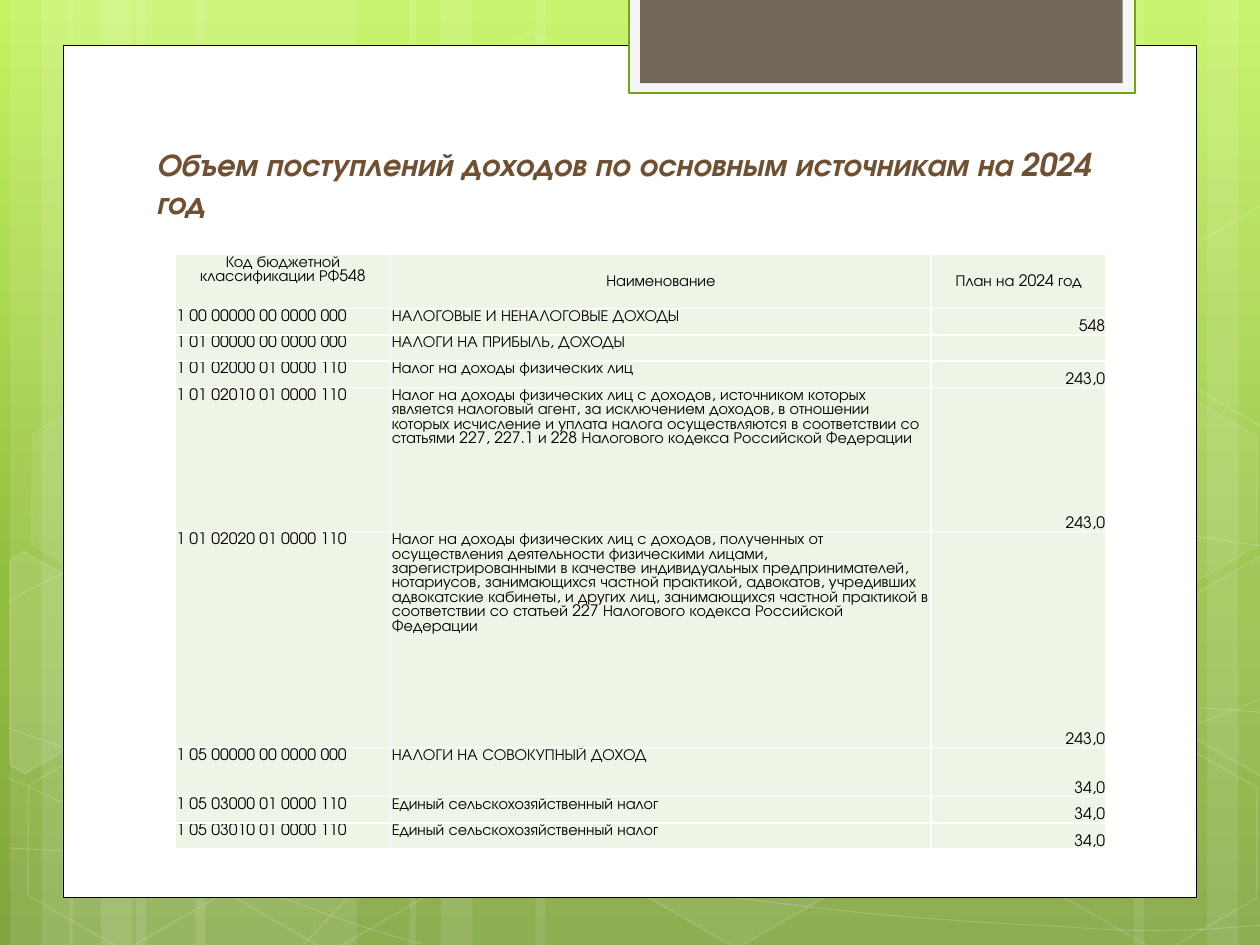
import copy
import dataclasses
import typing

import lxml.etree
import pptx
import pptx.dml.color
import pptx.enum.shapes
import pptx.enum.text
import pptx.oxml.ns
import pptx.util

Inches = pptx.util.Inches
Pt = pptx.util.Pt
qn = pptx.oxml.ns.qn
Kind = pptx.enum.shapes.MSO_SHAPE
Align = pptx.enum.text.PP_ALIGN
Anchor = pptx.enum.text.MSO_ANCHOR
Point = tuple[float, float]

FONT = "TeX Gyre Adventor"
COLORS = {
    "white": "FFFFFF", "black": "000000", "top": "C3F35F", "mid": "93BF3F",
    "low": "81A53E", "pale": "F5F5F5", "green": "74A510", "tab": "71685A",
    "title": "705032", "cell": "EEF5E7",
}


@dataclasses.dataclass
class Style:
    """Fill and line of a shape, with opacity in percent."""
    fill: str | None = None
    solid: int = 100
    line: str | None = None
    width: float = 1
    clear: int = 100


@dataclasses.dataclass
class Hexa:
    """Place and opacity of a tilted hexagon."""
    left: float
    top: float
    fill: int
    line: int


@dataclasses.dataclass
class Patch:
    """Cut hexagon at the slide's edge."""
    points: list[Point]
    fill: int


@dataclasses.dataclass
class Row:
    """Height and texts of a table row."""
    height: float
    code: str
    name: str
    plan: str


BARS = [(1.08, 1.75), (0.08, 0.5), (0.33, 0.83), (1.55, 1.75), (0.55, 0.5), (0.8, 0.83),
        (7.33, 1.75), (9.58, 0.5), (9, 0.83), (4.25, 3.08), (3.25, 0.5), (3.5, 0.83)]

WAVES = [
    [(0.07, 6.73), (0.61, 6.76), (1.15, 6.79), (1.9, 6.78), (2.65, 6.77), (3.58, 6.75),
     (4.58, 6.65), (5.58, 6.55), (7, 6.36), (7.92, 6.17), (8.83, 5.98), (9.77, 5.68), (10.07, 5.51)],
    [(0.07, 4.77), (0.36, 4.61), (0.65, 4.46), (1.21, 4.31), (1.78, 4.16), (2.59, 3.94),
     (3.47, 3.87), (4.36, 3.8), (5.44, 3.79), (6.54, 3.87), (7.64, 3.95), (9.47, 4.26), (10.07, 4.34)],
    [(0.06, 6.17), (1.27, 6.72), (2.47, 7.27), (3.34, 7.49)],
    [(0.07, 5.78), (0.38, 5.89), (0.7, 6), (1.28, 6.16), (1.86, 6.31), (2.73, 6.56),
     (3.57, 6.73), (4.4, 6.9), (5.45, 7.08), (6.28, 7.18), (7.11, 7.29), (8, 7.33),
     (8.53, 7.36), (9.05, 7.4), (9.19, 7.38), (9.45, 7.38), (9.71, 7.37), (9.89, 7.35), (10.07, 7.34)],
    [(2.42, 7.49), (2.6, 7.29), (2.78, 7.09), (3.02, 6.91), (3.26, 6.73), (3.6, 6.53),
     (3.88, 6.39), (4.16, 6.25), (4.33, 6.19), (4.7, 6.09), (5.06, 5.99), (5.73, 5.85),
     (6.08, 5.78), (6.44, 5.71), (6.49, 5.71), (6.8, 5.69), (7.11, 5.66), (7.6, 5.63),
     (7.94, 5.62), (8.29, 5.61), (8.86, 5.62), (8.86, 5.62), (9.08, 5.62), (9.3, 5.62),
     (9.53, 5.62), (9.71, 5.63), (9.88, 5.64), (9.97, 5.65), (10.06, 5.66), (10.03, 5.65), (10.06, 5.66)],
]

HEXAS = [Hexa(3.34, 0.36, 4, 8), Hexa(4.97, 5.89, 6, 12), Hexa(0.11, 5.91, 0, 12),
         Hexa(0.14, 3.12, 7, 8), Hexa(1.74, 5.92, 0, 12), Hexa(7.53, 4.53, 10, 12),
         Hexa(8.34, 5.93, 0, 12), Hexa(8.34, 3.14, 7, 8)]

PATCHES = [
    Patch([(0.08, 4.45), (0.19, 4.38), (0.96, 4.82), (0.95, 5.7), (0.2, 6.14), (0.08, 6.07)], 10),
    Patch([(9.26, 4.85), (10.01, 4.41), (10.09, 4.46), (10.09, 6.13), (10.02, 6.17), (9.26, 5.73)], 4),
    Patch([(9.26, 2.07), (10.01, 1.63), (10.1, 1.68), (10.09, 3.35), (10.02, 3.39), (9.26, 2.95)], 0),
]

ROWS = [
    Row(0.43, "Код бюджетной классификации РФ548", "Наименование", "План на 2024 год"),
    Row(0.21, "1 00 00000 00 0000 000", "НАЛОГОВЫЕ И НЕНАЛОГОВЫЕ ДОХОДЫ", "548"),
    Row(0.21, "1 01 00000 00 0000 000", "НАЛОГИ НА ПРИБЫЛЬ, ДОХОДЫ", ""),
    Row(0.21, "1 01 02000 01 0000 110", "Налог на доходы физических лиц", "243,0"),
    Row(1.15, "1 01 02010 01 0000 110",
        "Налог на доходы физических лиц с доходов, источником которых является налоговый агент, "
        "за исключением доходов, в отношении которых исчисление и уплата налога осуществляются "
        "в соответствии со статьями 227, 227.1 и 228 Налогового кодекса Российской Федерации", "243,0"),
    Row(1.72, "1 01 02020 01 0000 110",
        "Налог на доходы физических лиц с доходов, полученных от осуществления деятельности "
        "физическими лицами, зарегистрированными в качестве индивидуальных предпринимателей, "
        "нотариусов, занимающихся частной практикой, адвокатов, учредивших адвокатские кабинеты, "
        "и других лиц, занимающихся частной практикой в соответствии со статьей 227 "
        "Налогового кодекса Российской Федерации", "243,0"),
    Row(0.39, "1 05 00000 00 0000 000", "НАЛОГИ НА СОВОКУПНЫЙ ДОХОД", "34,0"),
    Row(0.21, "1 05 03000 01 0000 110", "Единый сельскохозяйственный налог", "34,0"),
    Row(0.21, "1 05 03010 01 0000 110", "Единый сельскохозяйственный налог", "34,0"),
]


def rgb(name: str) -> pptx.dml.color.RGBColor:
    """Look up a colour."""
    return pptx.dml.color.RGBColor.from_string(COLORS[name])


def paint(shape: typing.Any, style: Style) -> None:
    """Set fill, line and opacity."""
    shape.shadow.inherit = False
    props = shape._element.spPr
    for part, name, pct, where in (
        (shape.fill, style.fill, style.solid, qn("a:solidFill")),
        (shape.line.fill, style.line, style.clear, f"{qn('a:ln')}/{qn('a:solidFill')}"),
    ):
        if name is None:
            part.background()
            continue
        part.solid()
        part.fore_color.rgb = rgb(name)
        if pct < 100:
            tint = props.find(where)[0]
            lxml.etree.SubElement(tint, qn("a:alpha"), val=str(pct * 1000))
    if style.line:
        shape.line.width = Pt(style.width)


def block(slide: typing.Any, kind: typing.Any, box: tuple, style: Style) -> typing.Any:
    """Draw a preset shape."""
    shape = slide.shapes.add_shape(kind, *map(Inches, box))
    paint(shape, style)
    return shape


def trace(slide: typing.Any, points: list[Point], close: bool, style: Style) -> typing.Any:
    """Draw an outline through points."""
    spots = [(Inches(x), Inches(y)) for x, y in points]
    pen = slide.shapes.build_freeform(*spots[0])
    pen.add_line_segments(spots[1:], close=close)
    shape = pen.convert_to_shape()
    paint(shape, style)
    return shape


def bend(shape: typing.Any) -> None:
    """Turn each three line segments into a cubic curve."""
    lines = list(shape._element.iter(qn("a:lnTo")))
    trail = lines[0].getparent()
    for i in range(0, len(lines), 3):
        curve = lxml.etree.SubElement(trail, qn("a:cubicBezTo"))
        for line in lines[i:i + 3]:
            curve.append(line[0])
            trail.remove(line)


def shade(slide: typing.Any) -> None:
    """Fill the background with a gradient."""
    fill = slide.background.fill
    fill.gradient()
    fill.gradient_angle = 270
    stops = slide._element.find(f".//{qn('a:gsLst')}")
    stops.append(copy.deepcopy(stops[-1]))
    for stop, name, place in zip(fill.gradient_stops, ("top", "mid", "low"), (0, 0.62, 1)):
        stop.color.rgb = rgb(name)
        stop.position = place


def style_text(para: typing.Any, size: float, color: str) -> None:
    """Set the font of a paragraph."""
    para.font.name, para.font.size = FONT, Pt(size)
    para.font.color.rgb = rgb(color)


def write(cell: typing.Any, text: str, align: typing.Any, anchor: typing.Any) -> None:
    """Fill a table cell and rule its sides."""
    cell.margin_left = cell.margin_right = cell.margin_top = Inches(0.01)
    cell.margin_bottom = 0
    cell.vertical_anchor = anchor
    cell.text = text
    para = cell.text_frame.paragraphs[0]
    para.alignment = align
    style_text(para, 9, "black")
    if not text:
        lxml.etree.SubElement(para._p, qn("a:endParaRPr"), sz="900")
    props = cell._tc.get_or_add_tcPr()
    for side in ("lnL", "lnR", "lnT", "lnB"):
        line = lxml.etree.SubElement(props, qn(f"a:{side}"), w=str(Pt(1)))
        tint = lxml.etree.SubElement(line, qn("a:solidFill"))
        lxml.etree.SubElement(tint, qn("a:srgbClr"), val=COLORS["white"])
    cell.fill.solid()
    cell.fill.fore_color.rgb = rgb("cell")


def grid(slide: typing.Any) -> None:
    """Draw the income table."""
    tall = 4.72
    table = slide.shapes.add_table(len(ROWS), 3, *map(Inches, (1.39, 2.02, 7.39, tall))).table
    for col, width in zip(table.columns, (1.71, 4.29, 1.39)):
        col.width = Inches(width)
    ratio = tall / sum(row.height for row in ROWS)
    for r, row in enumerate(ROWS):
        table.rows[r].height = Inches(row.height * ratio)
        for c, text in enumerate((row.code, row.name, row.plan)):
            align = Align.CENTER if r == 0 else Align.RIGHT if c == 2 else Align.LEFT
            anchor = Anchor.TOP if c == 0 or (r and c == 1) else Anchor.BOTTOM if r else Anchor.MIDDLE
            write(table.cell(r, c), text, align, anchor)


def main() -> None:
    """Build the slide."""
    deck = pptx.Presentation()
    deck.slide_width, deck.slide_height = Inches(10), Inches(7.5)
    slide = deck.slides.add_slide(deck.slide_layouts[6])
    shade(slide)
    for left, width in BARS:
        block(slide, Kind.RECTANGLE, (left, 0, width, 7.5), Style("white", 10))
    for knots in WAVES:
        bend(trace(slide, knots, False, Style(line="white", width=0.5, clear=20)))
    for item in HEXAS:
        style = Style("white" if item.fill else None, item.fill, "white", 1, item.line)
        shape = block(slide, Kind.HEXAGON, (item.left, item.top, 1.75, 1.52), style)
        shape.adjustments[0] = 0.285
        shape.rotation = 30
    for item in PATCHES:
        trace(slide, item.points, True, Style("white" if item.fill else None, item.fill, "white", 1, 12))
    block(slide, Kind.RECTANGLE, (0.5, 0.36, 9, 6.76), Style("white", line="black", width=0.5))
    block(slide, Kind.RECTANGLE, (4.99, -0.02, 4.02, 0.76), Style("pale", line="green", width=1.25))
    block(slide, Kind.RECTANGLE, (5.08, -0.02, 3.83, 0.68), Style("tab"))
    frame = slide.shapes.add_textbox(*map(Inches, (1.14, 1.1, 7.68, 0.97))).text_frame
    frame.word_wrap = True
    frame.text = "Объем поступлений доходов по основным источникам на 2024 год"
    para = frame.paragraphs[0]
    style_text(para, 18, "title")
    para.font.bold = para.font.italic = True
    grid(slide)
    deck.save("out.pptx")


if __name__ == "__main__":
    main()
